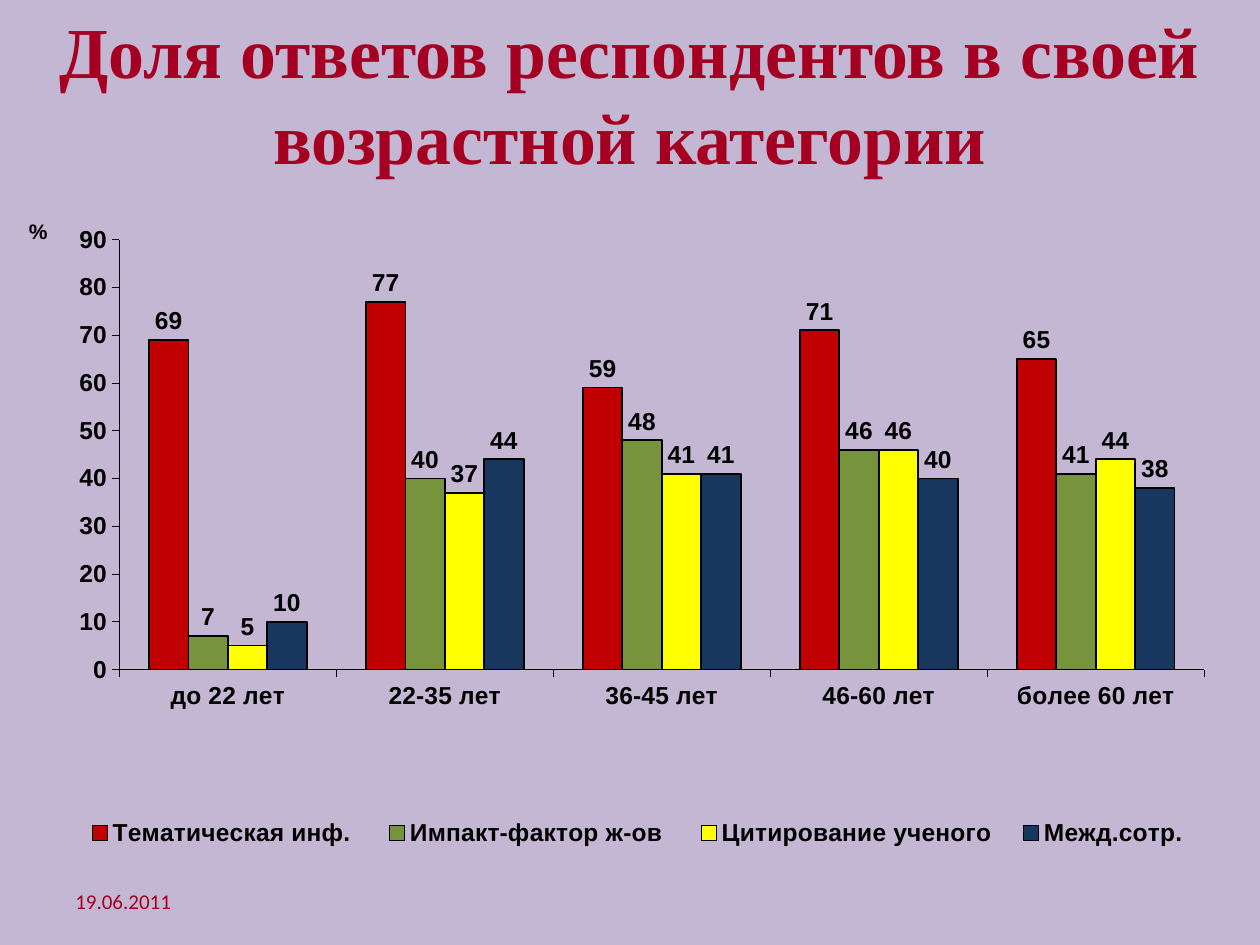
from lxml.etree import SubElement
from pptx import Presentation
from pptx.chart.data import CategoryChartData
from pptx.dml.color import RGBColor
from pptx.enum.chart import XL_CHART_TYPE, XL_LABEL_POSITION, XL_LEGEND_POSITION, XL_TICK_MARK
from pptx.enum.text import MSO_ANCHOR, PP_ALIGN
from pptx.oxml.ns import qn
from pptx.util import Inches, Pt

BACKGROUND = RGBColor(0xC4, 0xB7, 0xD4)
CRIMSON = RGBColor(0xA5, 0x00, 0x21)
BLACK = RGBColor(0x00, 0x00, 0x00)
RED = RGBColor(0xC0, 0x00, 0x00)
GREEN = RGBColor(0x77, 0x93, 0x3C)
YELLOW = RGBColor(0xFF, 0xFF, 0x00)
NAVY = RGBColor(0x17, 0x37, 0x5E)


def set_font(font, color, **values):
    for name, value in values.items():
        setattr(font, name, value)
    font.color.rgb = color


def set_layout(parent, before, **values):
    for old in parent.findall(qn("c:layout")):
        parent.remove(old)
    layout = SubElement(parent, qn("c:layout"))
    manual = SubElement(layout, qn("c:manualLayout"))
    for tag, value in values.items():
        SubElement(manual, qn(f"c:{tag}")).set("val", str(value))
    parent.find(qn(before)).addprevious(layout)


prs = Presentation()
prs.slide_width, prs.slide_height = Inches(10), Inches(7.5)
s = prs.slides.add_slide(prs.slide_layouts[6])
s.background.fill.solid()
s.background.fill.fore_color.rgb = BACKGROUND

texts = [
    ("Доля ответов респондентов в своей возрастной категории", (0, 0, 10, 1.48),
     PP_ALIGN.CENTER, {"size": Pt(41), "name": "Times New Roman", "bold": True}),
    ("19.06.2011", (0.5, 6.95, 2.33, 0.4),
     PP_ALIGN.LEFT, {"size": Pt(12), "name": "Calibri"}),
]
for text, box, align, fmt in texts:
    tf = s.shapes.add_textbox(*map(Inches, box)).text_frame
    tf.word_wrap = True
    tf.vertical_anchor = MSO_ANCHOR.MIDDLE
    p = tf.paragraphs[0]
    p.alignment = align
    r = p.add_run()
    r.text = text
    set_font(r.font, CRIMSON, **fmt)

series = [
    ("Тематическая инф. ", (69, 77, 59, 71, 65), RED),
    ("Импакт-фактор ж-ов ", (7, 40, 48, 46, 41), GREEN),
    ("Цитирование ученого", (5, 37, 41, 46, 44), YELLOW),
    ("Межд.сотр.", (10, 44, 41, 40, 38), NAVY),
]
data = CategoryChartData(number_format="0")
data.categories = ["до 22 лет", "22-35 лет", "36-45 лет", "46-60 лет", "более 60 лет"]
for name, values, _ in series:
    data.add_series(name, values)
chart = s.shapes.add_chart(
    XL_CHART_TYPE.COLUMN_CLUSTERED, Inches(0.16), Inches(1.48), Inches(9.61), Inches(5.55), data
).chart
chart.has_title = False
bold = {"size": Pt(14), "name": "Arial", "bold": True}
set_font(chart.font, BLACK, **bold)

plot = chart.plots[0]
plot.gap_width, plot.overlap, plot.vary_by_categories = 150, 0, False
for ser, (_, _, color) in zip(plot.series, series):
    ser.format.fill.solid()
    ser.format.fill.fore_color.rgb = color
    ser.format.line.color.rgb = BLACK
    ser.format.line.width = Pt(1)
    labels = ser.data_labels
    labels.show_value = True
    labels.number_format, labels.number_format_is_linked = "0", False
    labels.position = XL_LABEL_POSITION.OUTSIDE_END
    set_font(labels.font, BLACK, **bold)

for axis in (chart.category_axis, chart.value_axis):
    axis.has_major_gridlines = False
    axis.major_tick_mark = XL_TICK_MARK.OUTSIDE
    axis.format.line.color.rgb = BLACK
    axis.format.line.width = Pt(0.25)
    set_font(axis.tick_labels.font, BLACK, **bold)

axis = chart.value_axis
axis.minimum_scale, axis.maximum_scale, axis.major_unit = 0, 90, 10
axis.tick_labels.number_format, axis.tick_labels.number_format_is_linked = "0", False
title = axis.axis_title
tf = title.text_frame
tf._txBody.bodyPr.set("rot", "0")
r = tf.paragraphs[0].add_run()
r.text = "%"
set_font(r.font, BLACK, **{**bold, "size": Pt(12)})

chart.has_legend = True
legend = chart.legend
legend.position = XL_LEGEND_POSITION.BOTTOM
legend.include_in_layout = False
set_font(legend.font, BLACK, **bold)

set_layout(title._element, "c:overlay", xMode="edge", yMode="edge", x=0.004, y=0.04)
set_layout(legend._element, "c:overlay", xMode="edge", yMode="edge", x=0.04, y=0.89, w=0.94, h=0.07)
set_layout(chart._chartSpace.chart.plotArea, "c:barChart", layoutTarget="inner",
           xMode="edge", yMode="edge", x=0.082, y=0.076, w=0.896, h=0.615)

prs.save("out.pptx")
